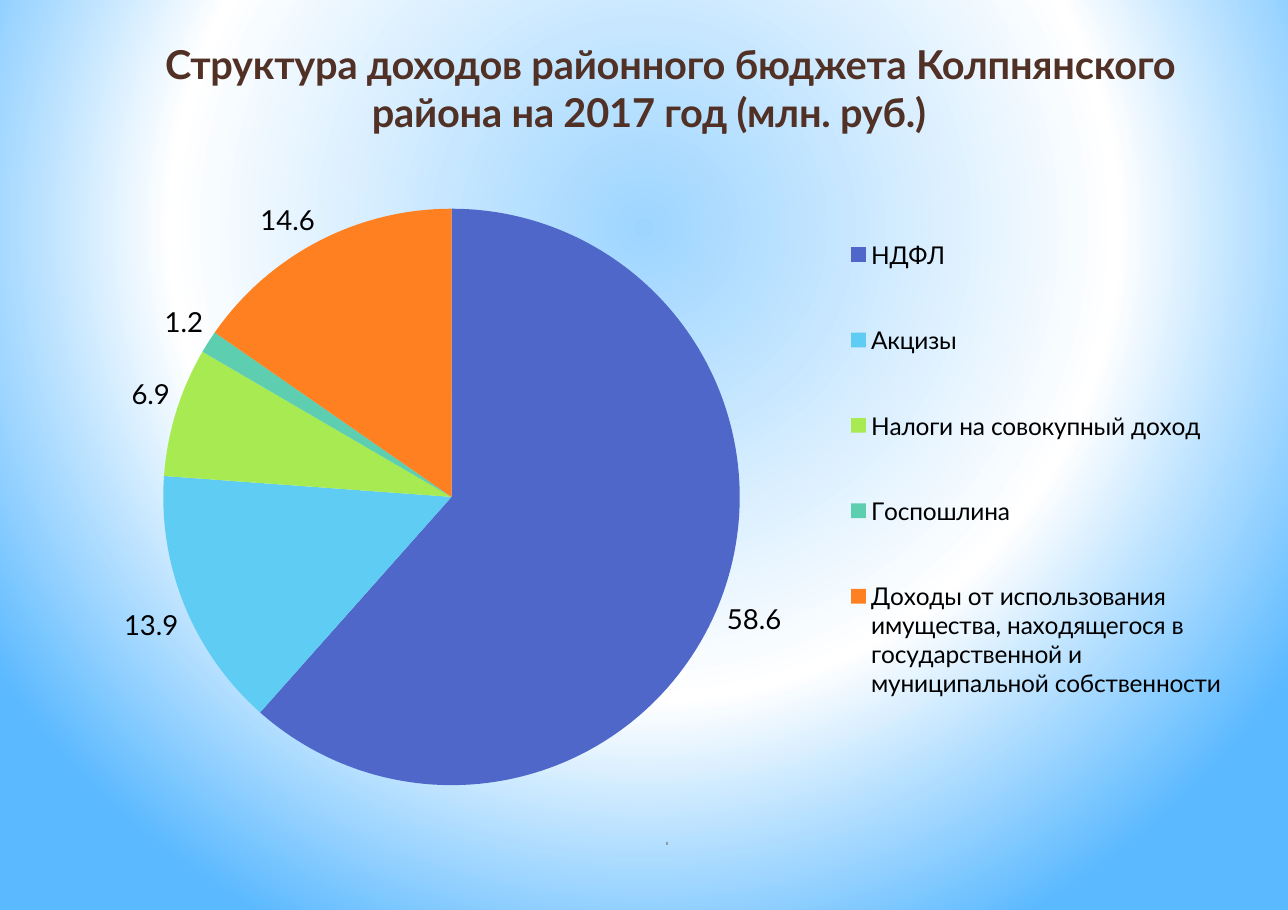
from lxml import etree
from pptx import Presentation
from pptx.chart.data import CategoryChartData
from pptx.dml.color import RGBColor
from pptx.enum.chart import XL_CHART_TYPE as ChartType
from pptx.enum.chart import XL_LABEL_POSITION as LabelPosition
from pptx.enum.chart import XL_LEGEND_POSITION as LegendPosition
from pptx.enum.text import MSO_ANCHOR as Anchor
from pptx.enum.text import MSO_AUTO_SIZE as AutoSize
from pptx.enum.text import PP_ALIGN as Align
from pptx.oxml import parse_xml
from pptx.oxml.ns import nsdecls, qn
from pptx.util import Inches, Pt

COLORS = {
    "center": "9ED5FF",
    "ring": "FFFFFF",
    "edge": "5BB9FF",
    "title": "513126",
    "footer": "808080",
    "text": "000000",
}
INCOME = [
    ("НДФЛ", 58.6, "4E67C8"),
    ("Акцизы", 13.9, "5ECCF3"),
    ("Налоги на совокупный доход", 6.9, "A7EA52"),
    ("Госпошлина", 1.2, "5DCEAF"),
    ("Доходы от использования имущества, находящегося в государственной "
     "и муниципальной собственности", 14.6, "FF8021"),
]


def write_text(shape, text, *, box, size, font, color, anchor, margin, indent, spacing):
    shape.left, shape.top, shape.width, shape.height = [Inches(value) for value in box]
    frame = shape.text_frame
    frame.word_wrap = True
    frame.auto_size = AutoSize.NONE
    frame.vertical_anchor = anchor
    frame.margin_left = frame.margin_top = frame.margin_right = frame.margin_bottom = 0
    paragraph = frame.paragraphs[0]
    paragraph.alignment = Align.CENTER
    properties = paragraph._p.get_or_add_pPr()
    properties.set("marL", str(Inches(margin)))
    properties.set("indent", str(Inches(indent)))
    run = paragraph.add_run()
    run.text = text
    run.font.name = font
    run.font.size = Pt(size)
    run.font.bold = True
    run.font.color.rgb = RGBColor.from_string(color)
    run.font._element.set("spc", str(spacing))


def set_layout(element, after, **values):
    old_layout = element.find(qn("c:layout"))
    if old_layout is not None:
        element.remove(old_layout)
    layout = parse_xml(f"<c:layout {nsdecls('c')}><c:manualLayout/></c:layout>")
    for name, value in values.items():
        etree.SubElement(layout[0], qn(f"c:{name}")).set("val", str(value))
    if after is None:
        element.insert(0, layout)
    else:
        after.addnext(layout)


presentation = Presentation()
presentation.slide_width = Inches(11.69)
presentation.slide_height = Inches(8.26)
slide = presentation.slides.add_slide(presentation.slide_layouts[5])

slide.background.fill.gradient()
gradient = next(slide.element.iter(qn("a:gradFill")))
stops = "".join(
    f'<a:gs pos="{position * 1000}"><a:srgbClr val="{COLORS[name]}"/></a:gs>'
    for position, name in [(0, "center"), (60, "ring"), (100, "edge")]
)
gradient.getparent().replace(gradient, parse_xml(
    f'<a:gradFill {nsdecls("a")} rotWithShape="1"><a:gsLst>{stops}</a:gsLst>'
    '<a:path path="circle"><a:fillToRect l="20000" t="10000" r="20000" b="60000"/>'
    '</a:path></a:gradFill>'
))

write_text(
    slide.shapes.title,
    "Структура доходов районного бюджета Колпнянского района на 2017 год (млн. руб.)",
    box=(0.76, 0.36, 10.25, 0.88), size=26, font="Lato", color=COLORS["title"],
    anchor=Anchor.TOP, margin=0.01, indent=0.39, spacing=-18,
)
write_text(
    slide.shapes.add_textbox(0, 0, 0, 0), "8",
    box=(4.87, 7.63, 2.34, 0.05), size=3, font="Arial", color=COLORS["footer"],
    anchor=Anchor.MIDDLE, margin=0.03, indent=0, spacing=0,
)

chart_data = CategoryChartData()
chart_data.categories = [name for name, value, color in INCOME]
chart_data.add_series("Series 1", [value for name, value, color in INCOME])
chart = slide.shapes.add_chart(
    ChartType.PIE, Inches(0.47), Inches(1.55), Inches(10.83), Inches(5.75), chart_data
).chart
chart.has_title = False
chart.font.name = "Lato"
chart.font.size = Pt(18)
chart.font.color.rgb = RGBColor.from_string(COLORS["text"])

plot = chart.plots[0]
plot.vary_by_categories = True
for index, (name, value, color) in enumerate(INCOME):
    fill = plot.series[0].points[index].format.fill
    fill.solid()
    fill.fore_color.rgb = RGBColor.from_string(color)
plot.has_data_labels = True
labels = plot.data_labels
labels.show_value = True
labels.show_percentage = False
labels.position = LabelPosition.OUTSIDE_END
labels.number_format = "0.0"
labels.number_format_is_linked = False

chart.has_legend = True
legend = chart.legend
legend.position = LegendPosition.RIGHT
legend.include_in_layout = False
legend.font.name = "Lato"
legend.font.size = Pt(16)
legend.font.color.rgb = RGBColor.from_string(COLORS["text"])

plot_area = next(chart.element.iter(qn("c:plotArea")))
set_layout(plot_area, None, layoutTarget="inner", xMode="edge", yMode="edge",
           x=0.09, y=0.06, w=0.49, h=0.91)
legend_element = next(chart.element.iter(qn("c:legend")))
set_layout(legend_element, legend_element.find(qn("c:legendPos")),
           xMode="edge", yMode="edge", x=0.66, y=0.02, w=0.33, h=0.9)

presentation.save("out.pptx")
